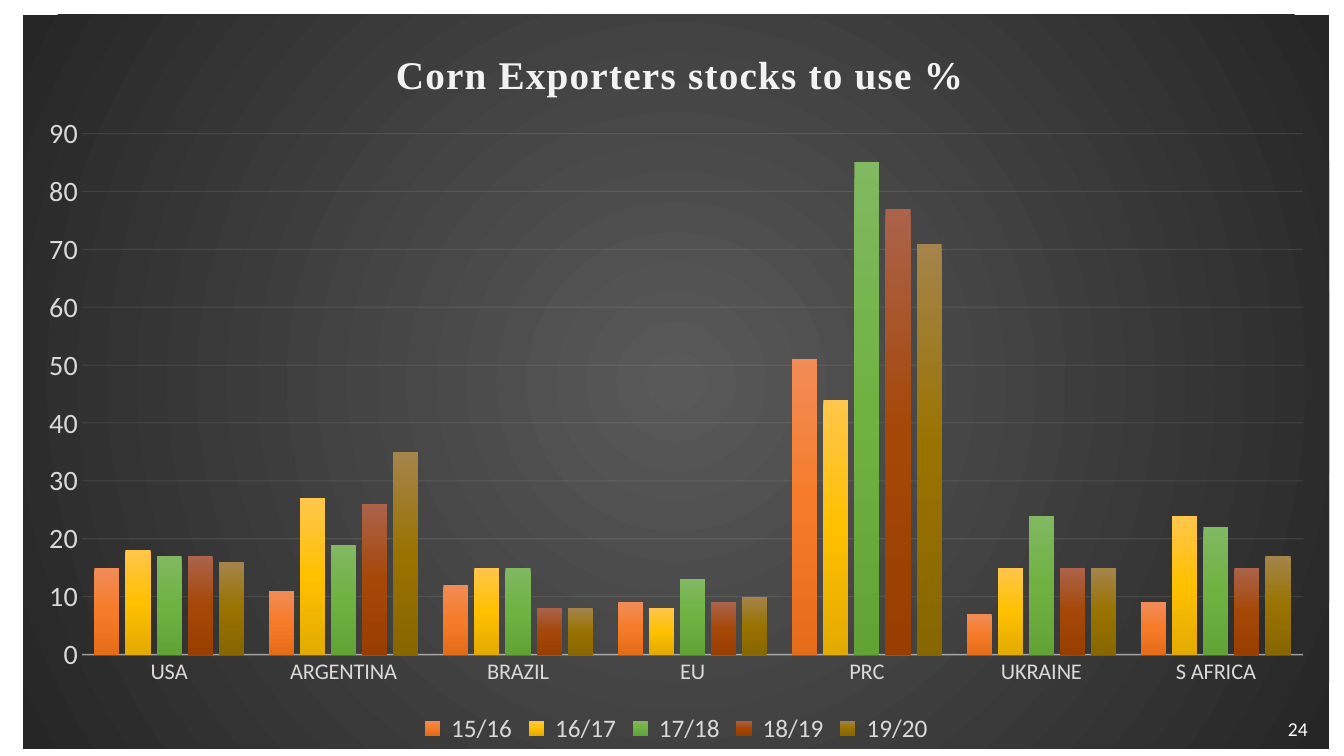
from lxml.etree import SubElement
from pptx import Presentation
from pptx.chart.data import CategoryChartData
from pptx.dml.color import RGBColor
from pptx.enum.chart import XL_CHART_TYPE, XL_LEGEND_POSITION, XL_TICK_MARK
from pptx.enum.text import MSO_ANCHOR, PP_ALIGN
from pptx.oxml import parse_xml
from pptx.oxml.ns import nsdecls, qn
from pptx.util import Pt

PX = 9525
NATIONS = ["USA", "ARGENTINA", "BRAZIL", "EU", "PRC", "UKRAINE", "S AFRICA"]
SEASONS = [
    (" 15/16", [15, 11, 12, 9, 51, 7, 9], ["F18C57", "F67B28", "E56C19"]),
    (" 16/17", [18, 27, 15, 8, 44, 15, 24], ["FFC64B", "FFC000", "E3AB00"]),
    (" 17/18", [17, 19, 15, 13, 85, 24, 22], ["81B861", "6FB242", "62A336"]),
    (" 18/19", [17, 26, 8, 9, 77, 15, 15], ["AB634B", "A54707", "983E00"]),
    (" 19/20", [16, 35, 8, 10, 71, 15, 17], ["A4844B", "997300", "886600"]),
]
LINEAR = '<a:lin ang="5400000" scaled="0"/>'
RADIAL = ('<a:path path="circle"><a:fillToRect l="50000" t="50000" '
          'r="50000" b="50000"/></a:path>')


def color(code):
    """Turn a hex string into a colour."""
    return RGBColor.from_string(code)


def blend(codes, shade):
    """Build a gradient fill with evenly spaced stops."""
    step = 100000 // (len(codes) - 1)
    stops = "".join(f'<a:gs pos="{i * step}"><a:srgbClr val="{code}"/></a:gs>'
                    for i, code in enumerate(codes))
    return parse_xml(f'<a:gradFill {nsdecls("a")} rotWithShape="1">'
                     f'<a:gsLst>{stops}</a:gsLst>{shade}</a:gradFill>')


def place(part, target="", **spots):
    """Give a chart part a fixed place, in shares of the chart."""
    old = part.find(qn("c:layout"))
    if old is not None:
        part.remove(old)
    inner = f'<c:layoutTarget val="{target}"/>' if target else ""
    modes = "".join(f'<c:{key}Mode val="edge"/>' for key in "xy")
    sizes = "".join(f'<c:{key} val="{val}"/>' for key, val in spots.items())
    node = parse_xml(f'<c:layout {nsdecls("c")}><c:manualLayout>{inner}{modes}'
                     f'{sizes}</c:manualLayout></c:layout>')
    part.insert(0 if part.find(qn("c:tx")) is None else 1, node)


class Deck:
    """Hold the style and the current slide."""

    def __init__(self, wide, high):
        """Start a deck with one blank slide."""
        self.file = Presentation()
        self.file.slide_width, self.file.slide_height = wide * PX, high * PX
        self.slide = self.file.slides.add_slide(self.file.slide_layouts[6])
        self.face, self.pale, self.light = "Calibri", "D9D9D9", "F2F2F2"

    def style(self, font, size, code, face=None, bold=False):
        """Set the look of a font."""
        font.name, font.size, font.bold = face or self.face, Pt(size), bold
        font.color.rgb = color(code)

    def line(self, line, width, alpha):
        """Draw a pale line with some opacity in percent."""
        line.width = Pt(width)
        line.color.rgb = color(self.light)
        tint = next(line._get_or_add_ln().iter(qn("a:srgbClr")))
        SubElement(tint, qn("a:alpha"), val=str(alpha * 1000))

    def text(self, box, words, size, code):
        """Add a right-aligned text box."""
        frame = self.slide.shapes.add_textbox(*(n * PX for n in box)).text_frame
        frame.word_wrap, frame.vertical_anchor = True, MSO_ANCHOR.MIDDLE
        para = frame.paragraphs[0]
        para.alignment = PP_ALIGN.RIGHT
        run = para.add_run()
        run.text = words
        self.style(run.font, size, code)

    def chart(self, box, cats, rows):
        """Add a column chart on a dark radial ground."""
        data = CategoryChartData(number_format="0")
        data.categories = cats
        for name, vals, _ in rows:
            data.add_series(name, vals)
        chart = self.slide.shapes.add_chart(
            XL_CHART_TYPE.COLUMN_CLUSTERED, *(n * PX for n in box), data).chart
        self.style(chart.font, 10, "000000")
        ground = parse_xml(f'<c:spPr {nsdecls("c", "a")}>'
                           '<a:ln><a:noFill/></a:ln></c:spPr>')
        ground.insert(0, blend(["595959", "262626"], RADIAL))
        root = chart._chartSpace
        root.find(qn("c:chart")).addnext(ground)
        place(next(root.iter(qn("c:plotArea"))), "inner",
              x=0.045, y=0.162, w=0.935, h=0.71)
        plot = chart.plots[0]
        plot.gap_width, plot.overlap, plot.vary_by_categories = 100, -24, False
        for bar, (_, _, codes) in zip(plot.series, rows):
            bar.invert_if_negative = False
            bar._element.get_or_add_spPr().insert(0, blend(codes, LINEAR))
        return chart

    def title(self, chart, words):
        """Add a bold, spaced chart title."""
        head = chart.chart_title
        run = head.text_frame.paragraphs[0].add_run()
        run.text = words
        self.style(run.font, 28, self.light, "Times New Roman", True)
        run.font._element.set("spc", "100")
        head.include_in_layout = False
        place(head._element, x=0.28, y=0.038)

    def axes(self, chart, top, step):
        """Style both axes and the grid."""
        for axis, size in (chart.category_axis, 16), (chart.value_axis, 20):
            axis.major_tick_mark = axis.minor_tick_mark = XL_TICK_MARK.NONE
            self.style(axis.tick_labels.font, size, self.pale)
        self.line(chart.category_axis.format.line, 1, 54)
        axis = chart.value_axis
        axis.format.line.fill.background()
        axis.minimum_scale, axis.maximum_scale, axis.major_unit = 0, top, step
        axis.tick_labels.number_format = "0"
        axis.tick_labels.number_format_is_linked = False
        self.line(axis.major_gridlines.format.line, 0.75, 10)

    def legend(self, chart):
        """Put the legend below the plot."""
        chart.has_legend = True
        chart.legend.position = XL_LEGEND_POSITION.BOTTOM
        chart.legend.include_in_layout = False
        self.style(chart.legend.font, 18, self.pale)


def main():
    """Build and save the slide."""
    deck = Deck(1280, 720)
    stocks = deck.chart((22, 14, 1244, 699), NATIONS, SEASONS)
    deck.title(stocks, "Corn Exporters stocks to use %")
    deck.axes(stocks, 90, 10)
    deck.legend(stocks)
    deck.text((967, 675, 288, 38), "24", 14, "FFFFFF")
    deck.file.save("out.pptx")


if __name__ == "__main__":
    main()
